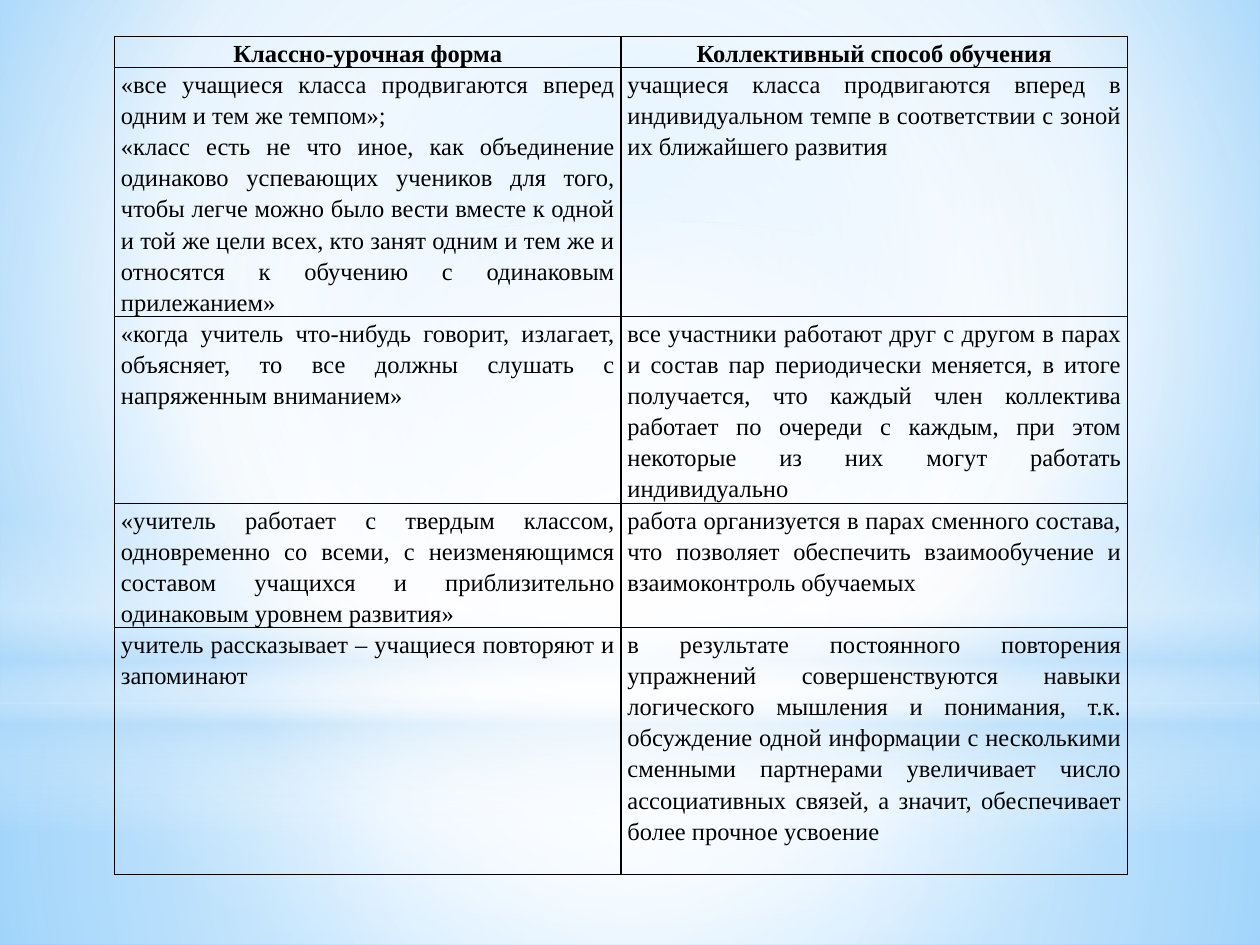
from dataclasses import dataclass
from typing import Optional

from pptx import Presentation
from pptx.dml.color import RGBColor
from pptx.enum.shapes import MSO_SHAPE as Shape
from pptx.enum.text import PP_ALIGN as Align
from pptx.oxml import parse_xml
from pptx.oxml.ns import nsdecls, qn
from pptx.util import Inches, Pt

WHITE, SKY, BLACK = "FFFFFF", "B4DCFA", "000000"
CENTRE = (50, 50, 50, 50)


@dataclass
class Gradient:
    stops: list  # (position %, colour, opacity %)
    focus: Optional[tuple] = None  # left, top, right, bottom %; None is top to bottom


@dataclass
class Glow:
    top: float
    height: float
    gradient: Gradient
    kind: int = Shape.RECTANGLE


@dataclass
class Row:
    height: float
    left: list
    right: list


BACKDROP = Gradient([(0, "9ED5FF", 100), (60, WHITE, 100), (100, "5BB9FF", 100)],
                    (20, 10, 20, 60))
GLOWS = [
    Glow(5.58, 1.92, Gradient([(0, WHITE, 91), (37, WHITE, 76), (100, SKY, 79)], CENTRE)),
    Glow(0, 5.58, Gradient([(0, WHITE, 89), (48, WHITE, 62), (100, SKY, 79)], CENTRE)),
    Glow(4.12, 2.5, Gradient([(0, WHITE, 0), (29, WHITE, 30), (45, SKY, 40),
                              (55, WHITE, 26), (65, SKY, 60), (100, WHITE, 0)])),
    Glow(1.75, 5.58, Gradient([(0, WHITE, 100), (56, WHITE, 0)], CENTRE), Shape.OVAL),
]

ROWS = [
    Row(0.24, ["Классно-урочная форма"], ["Коллективный способ обучения"]),
    Row(1.96,
        ["«все учащиеся класса продвигаются вперед одним и тем же темпом»;",
         "«класс есть не что иное, как объединение одинаково успевающих учеников "
         "для того, чтобы легче можно было вести вместе к одной и той же цели всех, "
         "кто занят одним и тем же и относятся к обучению с одинаковым прилежанием»"],
        ["учащиеся класса продвигаются вперед в индивидуальном темпе в соответствии "
         "с зоной их ближайшего развития"]),
    Row(1.47,
        ["«когда учитель что-нибудь говорит, излагает, объясняет, то все должны "
         "слушать с напряженным вниманием»"],
        ["все участники работают друг с другом в парах и состав пар периодически "
         "меняется, в итоге получается, что каждый член коллектива работает по очереди "
         "с каждым, при этом некоторые из них могут работать индивидуально"]),
    Row(0.98,
        ["«учитель работает с твердым классом, одновременно со всеми, с "
         "неизменяющимся составом учащихся и приблизительно одинаковым уровнем развития»"],
        ["работа организуется в парах сменного состава, что позволяет обеспечить "
         "взаимообучение и взаимоконтроль обучаемых"]),
    Row(1.96,
        ["учитель рассказывает – учащиеся повторяют и запоминают"],
        ["в результате постоянного повторения упражнений совершенствуются навыки "
         "логического мышления и понимания, т.к. обсуждение одной информации с "
         "несколькими сменными партнерами увеличивает число ассоциативных связей, "
         "а значит, обеспечивает более прочное усвоение"]),
]

CELL_FORMAT = {"margin_left": Inches(0.05), "margin_right": Inches(0.05),
               "margin_top": 0, "margin_bottom": 0}
FONT_FORMAT = {"name": "Times New Roman", "size": Pt(14)}


def apply(target, values: dict) -> None:
    for name, value in values.items():
        setattr(target, name, value)


def colour(code: str) -> RGBColor:
    return RGBColor.from_string(code)


def set_gradient(fill, owner, gradient: Gradient) -> None:
    """Put a gradient in place of the solid fill of the owner element."""
    stops = "".join(
        f'<a:gs pos="{pos * 1000}"><a:srgbClr val="{code}">'
        f'<a:alpha val="{opacity * 1000}"/></a:srgbClr></a:gs>'
        for pos, code, opacity in gradient.stops)
    if gradient.focus:
        sides = " ".join(f'{side}="{value * 1000}"'
                         for side, value in zip("ltrb", gradient.focus))
        course = f'<a:path path="circle"><a:fillToRect {sides}/></a:path>'
    else:
        course = '<a:lin ang="5400000" scaled="0"/>'
    fill.solid()
    owner.replace(owner.find(qn("a:solidFill")), parse_xml(
        f'<a:gradFill {nsdecls("a")} rotWithShape="1">'
        f'<a:gsLst>{stops}</a:gsLst>{course}</a:gradFill>'))


def draw_glow(page, glow: Glow) -> None:
    shape = page.shapes.add_shape(glow.kind, 0, Inches(glow.top),
                                  Inches(10), Inches(glow.height))
    shape.shadow.inherit = False
    shape.line.fill.background()
    set_gradient(shape.fill, shape._element.spPr, glow.gradient)


def set_borders(cell) -> None:
    props = cell._tc.get_or_add_tcPr()
    for index, side in enumerate("LRTB"):
        props.insert(index, parse_xml(
            f'<a:ln{side} {nsdecls("a")} w="{Pt(1)}"><a:solidFill>'
            f'<a:srgbClr val="{BLACK}"/></a:solidFill></a:ln{side}>'))


def fill_cell(cell, texts: list, heading: bool) -> None:
    apply(cell, CELL_FORMAT)
    cell.fill.background()
    set_borders(cell)
    frame = cell.text_frame
    for index, text in enumerate(texts):
        para = frame.add_paragraph() if index else frame.paragraphs[0]
        apply(para, {"alignment": Align.CENTER if heading else Align.JUSTIFY,
                     "line_spacing": 1.15})
        span = para.add_run()
        span.text = text
        apply(span.font, {**FONT_FORMAT, "bold": heading})
        span.font.color.rgb = colour(BLACK)


def draw_table(page, rows: list) -> None:
    height = sum(row.height for row in rows)
    table = page.shapes.add_table(len(rows), 2, Inches(0.91), Inches(0.29),
                                  Inches(8.04), Inches(height)).table
    apply(table, {"first_row": False, "horz_banding": False})
    for column in table.columns:
        column.width = Inches(4.02)
    for index, row in enumerate(rows):
        table.rows[index].height = Inches(row.height)
        for side, texts in enumerate((row.left, row.right)):
            fill_cell(table.cell(index, side), texts, heading=index == 0)


def main() -> None:
    deck = Presentation()
    apply(deck, {"slide_width": Inches(10), "slide_height": Inches(7.5)})
    page = deck.slides.add_slide(deck.slide_layouts[6])

    # Sky background with soft glows
    fill = page.background.fill
    set_gradient(fill, page._element.find(".//" + qn("p:bgPr")), BACKDROP)
    for glow in GLOWS:
        draw_glow(page, glow)

    # Comparison of the two forms of teaching
    draw_table(page, ROWS)
    deck.save("out.pptx")


if __name__ == "__main__":
    main()
